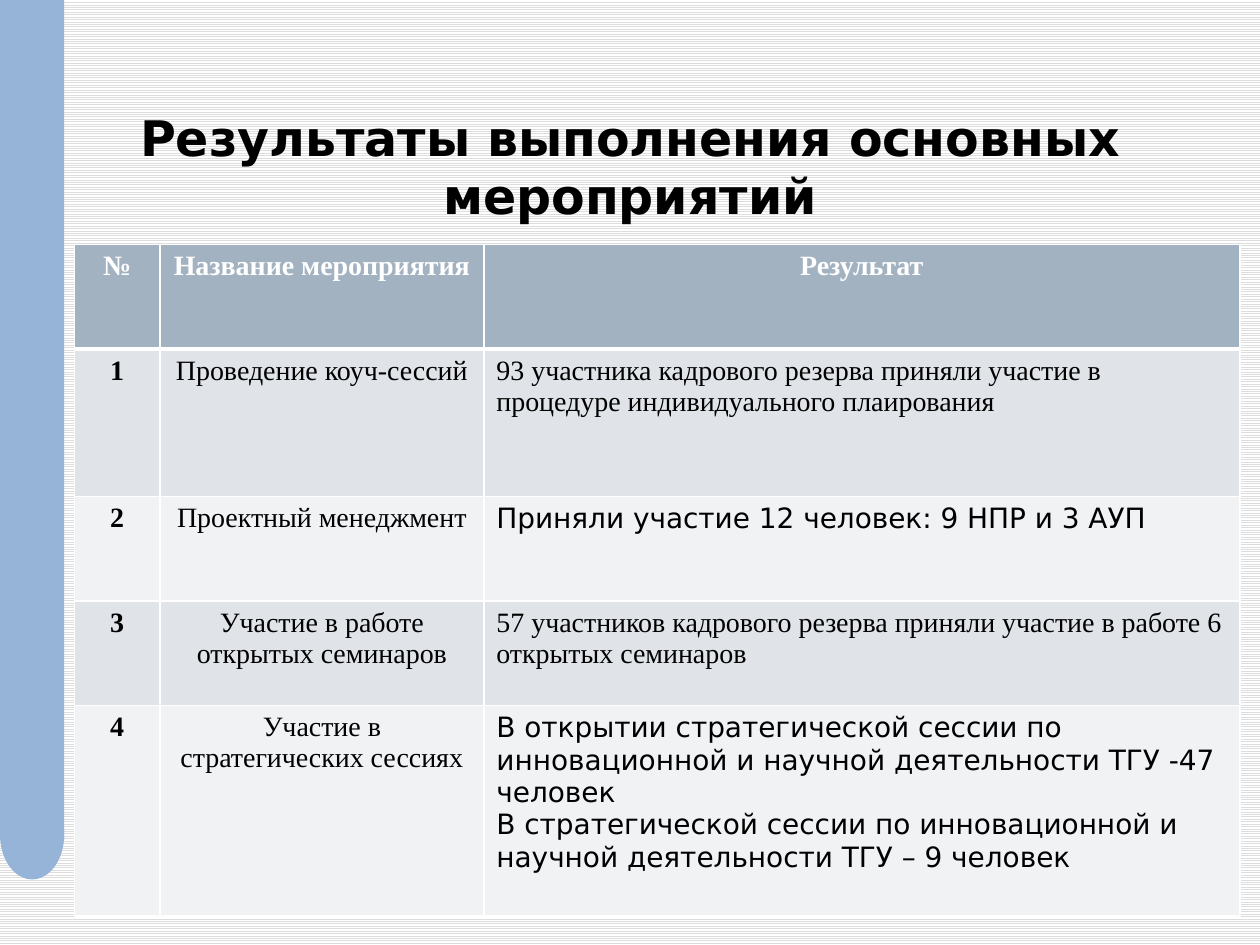
from dataclasses import dataclass

from lxml import etree
from pptx import Presentation
from pptx.dml.color import RGBColor
from pptx.enum import dml, shapes, text
from pptx.oxml import ns
from pptx.util import Pt

PX = 9144
SANS = "DejaVu Sans"
SERIF = "Times New Roman"
STRIPE = "96B4D7"
HEADER_FILL = "A3B2C1"
BAND_FILLS = ("E0E4E9", "F0F2F4")
COLUMN_WIDTHS = (68, 257, 600)
HEADINGS = ("№", "Название мероприятия", "Результат")


@dataclass(frozen=True)
class Event:
    name: str
    result: str
    font: str
    height: int


EVENTS = (
    Event("Проведение коуч-сессий",
          "93 участника кадрового резерва приняли участие в процедуре индивидуального плаирования",
          SERIF, 117),
    Event("Проектный менеджмент", "Приняли участие 12 человек: 9 НПР и 3 АУП", SANS, 83),
    Event("Участие в работе открытых семинаров",
          "57 участников кадрового резерва приняли участие в работе 6 открытых семинаров",
          SERIF, 83),
    Event("Участие в стратегических сессиях",
          "В открытии стратегической сессии по инновационной и научной деятельности ТГУ -47 человек\n"
          "В стратегической сессии по инновационной и научной деятельности ТГУ – 9 человек",
          SANS, 167),
)


def color(value: str) -> RGBColor:
    return RGBColor.from_string(value)


def px(*values: int) -> list[int]:
    return [value * PX for value in values]


def write(frame, content: str, font: str, size: int, fill: str, bold: bool, centered: bool) -> None:
    frame.text = content
    for para in frame.paragraphs:
        para.alignment = text.PP_ALIGN.CENTER if centered else text.PP_ALIGN.LEFT
        for span in para.runs:
            span.font.name = font
            span.font.size = Pt(size)
            span.font.bold = bold
            span.font.color.rgb = color(fill)


def add_stripe_part(page, kind, top: int, height: int) -> None:
    part = page.shapes.add_shape(kind, *px(0, top, 51, height))
    part.shadow.inherit = False
    part.fill.solid()
    part.fill.fore_color.rgb = color(STRIPE)
    part.line.fill.background()


def add_borders(cell, top: int, bottom: int) -> None:
    properties = cell._tc.get_or_add_tcPr()
    for side, width in (("L", 1), ("R", 1), ("T", top), ("B", bottom)):
        line = etree.SubElement(properties, ns.qn(f"a:ln{side}"), w=str(Pt(width)))
        fill = etree.SubElement(line, ns.qn("a:solidFill"))
        etree.SubElement(fill, ns.qn("a:srgbClr"), val="FFFFFF")


def add_events(page) -> None:
    heights = (83, *(event.height for event in EVENTS))
    rows = [HEADINGS] + [
        (str(number), event.name, event.result) for number, event in enumerate(EVENTS, 1)
    ]
    frame = page.shapes.add_table(
        len(rows), len(COLUMN_WIDTHS), *px(59, 194, sum(COLUMN_WIDTHS), sum(heights)))
    table = frame.table
    for column, width in zip(table.columns, COLUMN_WIDTHS):
        column.width = width * PX
    for row, height in zip(table.rows, heights):
        row.height = height * PX
    for i, values in enumerate(rows):
        header = i == 0
        for j, value in enumerate(values):
            cell = table.cell(i, j)
            add_borders(cell, 3 if i == 1 else 1, 3 if header else 1)
            cell.fill.solid()
            cell.fill.fore_color.rgb = color(HEADER_FILL if header else BAND_FILLS[(i - 1) % 2])
            font = EVENTS[i - 1].font if not header and j == 2 else SERIF
            write(cell.text_frame, value, font, 16, "FFFFFF" if header else "000000",
                  bold=header or j == 0, centered=header or j < 2)


def main() -> None:
    deck = Presentation()
    deck.slide_width, deck.slide_height = px(1000, 750)
    page = deck.slides.add_slide(deck.slide_layouts[5])
    background = page.background.fill
    background.patterned()
    background.pattern = dml.MSO_PATTERN.LIGHT_HORIZONTAL
    background.fore_color.rgb = color("DDDDDD")
    background.back_color.rgb = color("FFFFFF")

    add_stripe_part(page, shapes.MSO_SHAPE.RECTANGLE, 0, 666)
    add_stripe_part(page, shapes.MSO_SHAPE.OVAL, 627, 71)

    title = page.shapes.title
    title.left, title.top, title.width, title.height = px(50, 80, 900, 94)
    frame = title.text_frame
    frame.auto_size = text.MSO_AUTO_SIZE.NONE
    frame.vertical_anchor = text.MSO_ANCHOR.TOP
    write(frame, "Результаты выполнения основных мероприятий", SANS, 28, "000000",
          bold=True, centered=True)

    add_events(page)
    deck.save("out.pptx")


if __name__ == "__main__":
    main()
